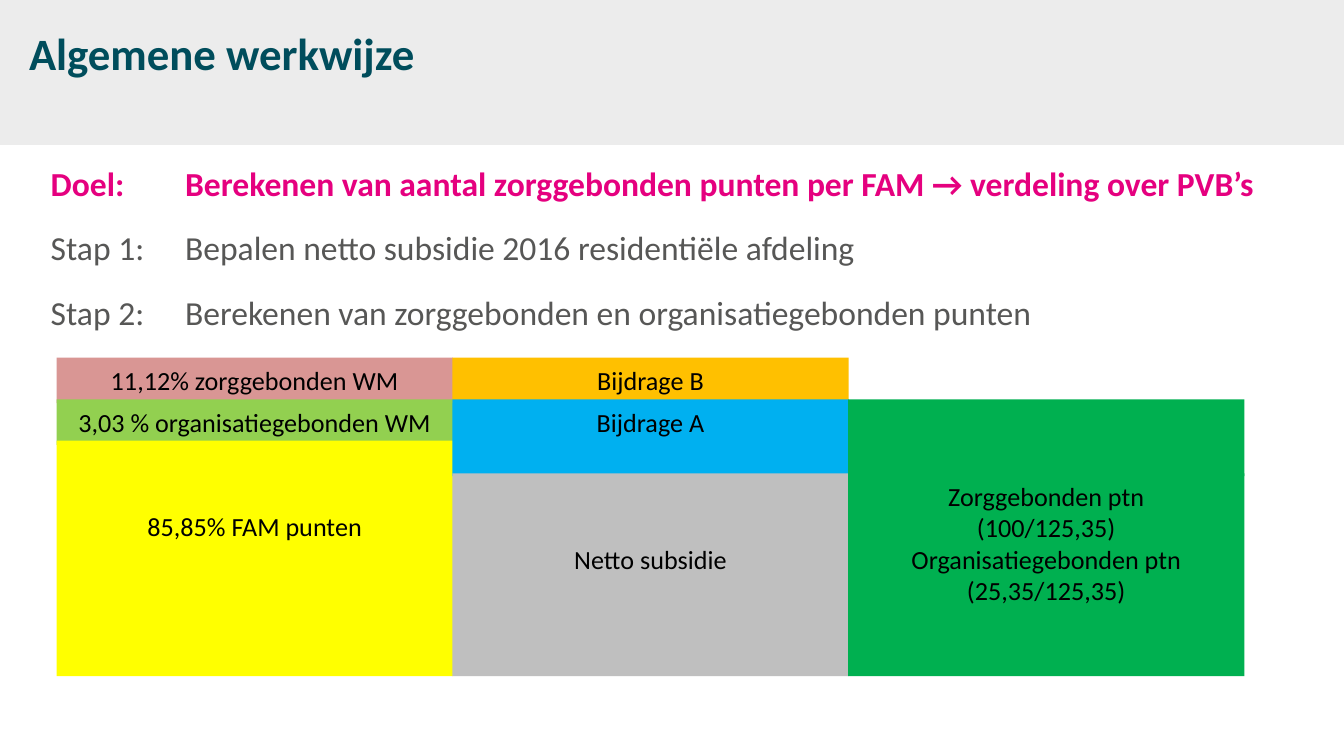
import pptx
import pptx.dml.color
import pptx.enum.shapes
import pptx.enum.text
import pptx.util

Cm = pptx.util.Cm
LEFT, PITCH, WIDTH = 1.07, 7.48, 7.49
TOPS = {"high": 6.76, "mid": 7.55, "low": 8.33, "base": 8.95}
THIN, HALF = 0.86, 1.45
DROP = 1.33

STEPS = [
    ("Doel:\tBerekenen van aantal zorggebonden punten per FAM → verdeling over PVB’s", "E5007F", True),
    ("Stap 1:\tBepalen netto subsidie 2016 residentiële afdeling", "575756", False),
    ("Stap 2:\tBerekenen van zorggebonden en organisatiegebonden punten", "575756", False),
]
BLOCKS = [
    (0, "high", THIN, "D99694", ["11,12% zorggebonden WM"], 0),
    (0, "mid", THIN, "92D050", ["3,03 % organisatiegebonden WM"], 0),
    (0, "low", 4.45, "FFFF00", ["85,85% FAM punten"], DROP),
    (1, "high", THIN, "FFC000", ["Bijdrage B"], 0),
    (1, "mid", HALF, "00B0F0", ["Bijdrage A"], 0),
    (1, "base", 3.83, "BFBFBF", ["Netto subsidie"], DROP),
    (2, "mid", HALF, "00B050", [], 0),
    (2, "base", 3.83, "00B050",
     ["Zorggebonden ptn", "(100/125,35)", "Organisatiegebonden ptn (25,35/125,35)"], 0),
]


def color(code):
    """Turn a hex string into a colour."""
    return pptx.dml.color.RGBColor.from_string(code)


def write(frame, lines, size, code, bold=False, align=None):
    """Fill a text frame with one paragraph per line."""
    frame.word_wrap = True
    frame.vertical_anchor = pptx.enum.text.MSO_ANCHOR.TOP
    for index, line in enumerate(lines):
        para = frame.paragraphs[0] if index == 0 else frame.add_paragraph()
        para.text = line
        para.alignment = align
        para.font.name = "Calibri"
        para.font.size = pptx.util.Pt(size)
        para.font.bold = bold
        para.font.color.rgb = color(code)


def label(slide, left, top, width, height, text, size, code, bold):
    """Add a text box with a single line."""
    box = slide.shapes.add_textbox(Cm(left), Cm(top), Cm(width), Cm(height))
    write(box.text_frame, [text], size, code, bold)


def block(slide, left, top, width, height, code):
    """Add a plain filled rectangle without an outline."""
    kind = pptx.enum.shapes.MSO_SHAPE.RECTANGLE
    shape = slide.shapes.add_shape(kind, Cm(left), Cm(top), Cm(width), Cm(height))
    shape.shadow.inherit = False
    shape.fill.solid()
    shape.fill.fore_color.rgb = color(code)
    shape.line.fill.background()
    return shape


def main():
    """Build the slide and save it."""
    deck = pptx.Presentation()
    deck.slide_width, deck.slide_height = Cm(25.4), Cm(14.29)
    slide = deck.slides.add_slide(deck.slide_layouts[6])
    block(slide, 0, 0, 25.4, 2.74, "ECECEC")
    label(slide, 0.3, 0.36, 24.61, 1.19, "Algemene werkwijze", 24, "004D5C", True)
    for row, (text, code, bold) in enumerate(STEPS):
        label(slide, 0.71, 2.95 + 1.22 * row, 24.21, 1.02, text, 18, code, bold)
    center = pptx.enum.text.PP_ALIGN.CENTER
    for col, level, height, code, lines, drop in BLOCKS:
        shape = block(slide, LEFT + PITCH * col, TOPS[level], WIDTH, height, code)
        shape.text_frame.margin_top = Cm(0.13 + drop * 0.9)
        write(shape.text_frame, lines, 14, "000000", align=center)
    deck.save("out.pptx")


if __name__ == "__main__":
    main()
